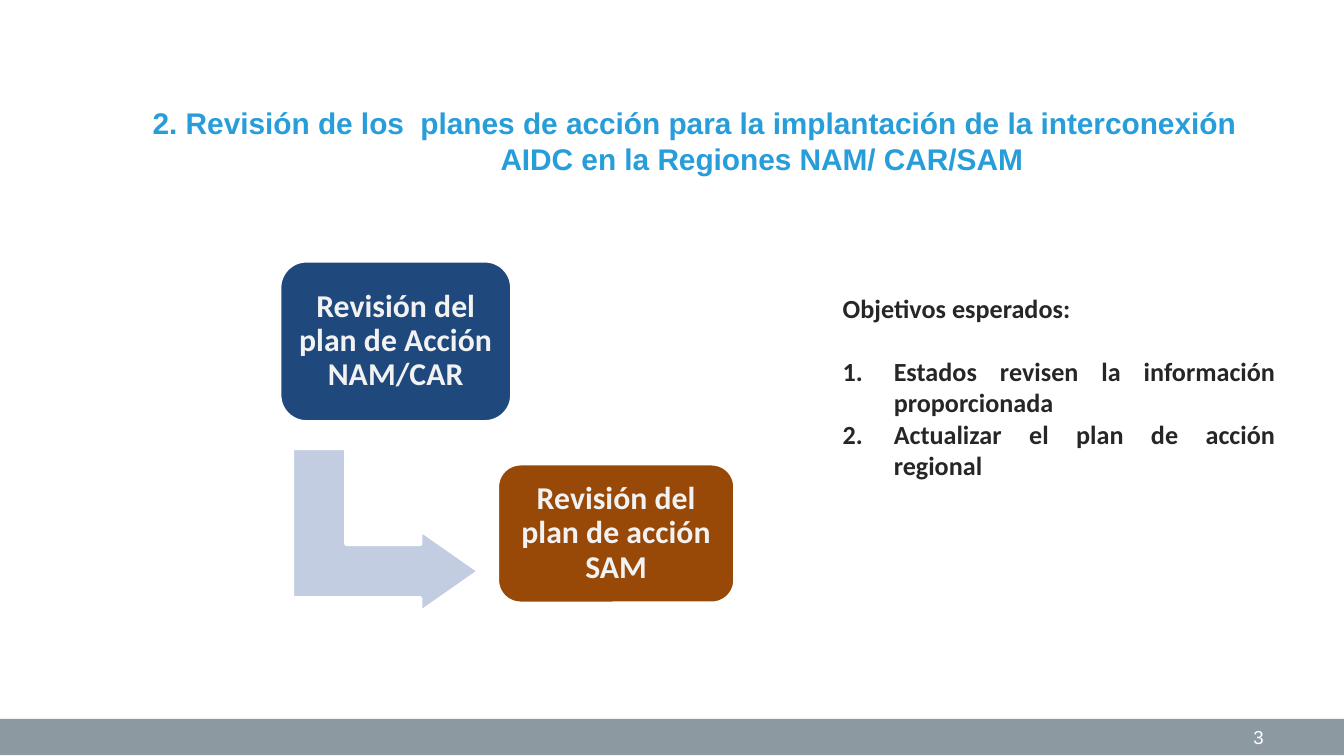
from lxml import etree
from pptx import Presentation
from pptx.dml.color import RGBColor
from pptx.enum.shapes import MSO_SHAPE
from pptx.enum.text import MSO_ANCHOR, MSO_AUTO_SIZE, PP_ALIGN
from pptx.oxml.ns import qn
from pptx.util import Inches, Pt

RECT, ROUNDED, BENT = MSO_SHAPE.RECTANGLE, MSO_SHAPE.ROUNDED_RECTANGLE, MSO_SHAPE.BENT_UP_ARROW
CENTER, RIGHT, JUSTIFY = PP_ALIGN.CENTER, PP_ALIGN.RIGHT, PP_ALIGN.JUSTIFY
TOP, MIDDLE = MSO_ANCHOR.TOP, MSO_ANCHOR.MIDDLE
COLORS = {
    "title": "279DD9", "footer": "8C99A1", "arrow": "C2CDE1", "navy": "1F497D",
    "brown": "984807", "white": "FFFFFF", "light": "F2F2F2", "dark": "262626",
}


def add_block(kind, place, color, outlined=True):
    block = page.shapes.add_shape(kind, *[Inches(value) for value in place])
    block.shadow.inherit = False
    block.fill.solid()
    block.fill.fore_color.rgb = RGBColor.from_string(COLORS[color])
    if outlined:
        block.line.color.rgb = RGBColor.from_string(COLORS["white"])
        block.line.width = Pt(2)
    else:
        block.line.fill.background()
    return block


def write(para, text, size, color, align, font="Calibri", bold=True):
    para.alignment = align
    span = para.add_run()
    span.text = text
    span.font.name = font
    span.font.size = Pt(size)
    span.font.bold = bold
    span.font.color.rgb = RGBColor.from_string(COLORS[color])


deck = Presentation()
deck.slide_width = Inches(10)
deck.slide_height = Inches(10) * 9 // 16
page = deck.slides.add_slide(deck.slide_layouts[1])

# Footer band with the page number
add_block(RECT, (0, 5.35, 10, 0.27), "footer", outlined=False)
number = page.shapes.add_textbox(Inches(7.17), Inches(5.35), Inches(2.33), Inches(0.27))
number.text_frame.word_wrap = True
number.text_frame.vertical_anchor = MIDDLE
write(number.text_frame.paragraphs[0], "3", 10, "white", RIGHT, "Arial", False)

# Title, with its second line indented
title, body = page.shapes.title, page.placeholders[1]
for box, place, anchor in (
    (title, (0.67, 0.73, 9, 0.94), TOP),
    (body, (6.17, 1.56, 3.42, 3.16), MIDDLE),
):
    box.left, box.top, box.width, box.height = [Inches(value) for value in place]
    box.text_frame.auto_size = MSO_AUTO_SIZE.NONE
    box.text_frame.word_wrap = True
    box.text_frame.vertical_anchor = anchor

heading = title.text_frame
write(heading.paragraphs[0],
      "2. Revisión de los  planes de acción para la implantación de la interconexión",
      16, "title", CENTER, "Arial")
second_line = heading.add_paragraph()
second_line._p.get_or_add_pPr().set("marL", str(Inches(1)))
write(second_line, "AIDC en la Regiones NAM/ CAR/SAM", 16, "title", CENTER, "Arial")

# Action plan steps joined by a bent arrow
arrow = add_block(BENT, (2.26, 3.25, 1.22, 1.39), "arrow")
arrow.rotation = 90
for index, value in enumerate((0.328, 0.25, 0.358)):
    arrow.adjustments[index] = value

for text, place, color in (
    ("Revisión del plan de Acción NAM/CAR", (2.08, 1.94, 1.73, 1.2), "navy"),
    ("Revisión del plan de acción SAM", (3.7, 3.45, 1.77, 1.04), "brown"),
):
    step = add_block(ROUNDED, place, color)
    frame = step.text_frame
    frame.word_wrap = True
    frame.vertical_anchor = MIDDLE
    frame.margin_left = frame.margin_right = Inches(0.08)
    frame.margin_top = frame.margin_bottom = Inches(0.07)
    frame.paragraphs[0].line_spacing = 0.9
    write(frame.paragraphs[0], text, 17, "light", CENTER)

# Expected objectives as a numbered list
goals = body.text_frame
goals.margin_bottom = Inches(0.58)
for index, text in enumerate((
    "Objetivos esperados:",
    "Estados revisen la información proporcionada",
    "Actualizar el plan de acción regional",
)):
    para = goals.add_paragraph() if index else goals.paragraphs[0]
    props = para._p.get_or_add_pPr()
    indent = Inches(0.38) if index else 0
    props.set("marL", str(indent))
    props.set("indent", str(-indent))
    if index:
        etree.SubElement(props, qn("a:buFont"), typeface="+mj-lt")
        etree.SubElement(props, qn("a:buAutoNum"), type="arabicPeriod")
    else:
        etree.SubElement(props, qn("a:buNone"))
    para.space_before = Pt(17 if index == 1 else 0)
    write(para, text, 14, "dark", JUSTIFY)

deck.save("out.pptx")
